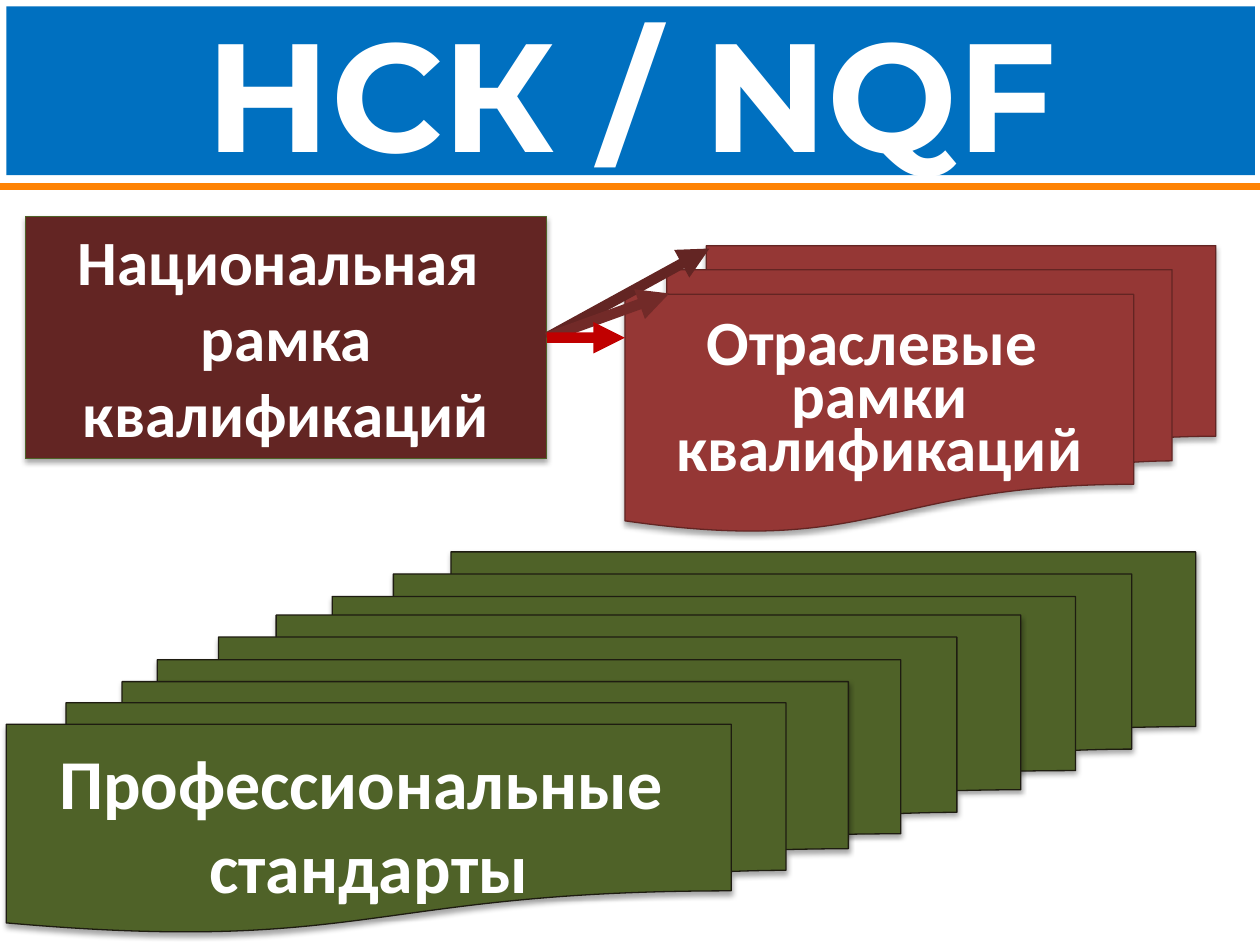
import pptx
import pptx.util
import pptx.dml.color
import pptx.enum.shapes
import pptx.enum.text
import pptx.oxml
import pptx.oxml.ns

RGBColor = pptx.dml.color.RGBColor
Inches = pptx.util.Inches
Pt = pptx.util.Pt
SHAPE = pptx.enum.shapes.MSO_SHAPE
ANCHOR = pptx.enum.text.MSO_ANCHOR

WHITE = RGBColor(0xFF, 0xFF, 0xFF)
BLUE = RGBColor(0x00, 0x70, 0xC0)
ORANGE = RGBColor(0xFE, 0x83, 0x04)
MAROON = RGBColor(0x63, 0x25, 0x23)
DARK_RED = RGBColor(0x72, 0x2A, 0x28)
RED = RGBColor(0xC0, 0x00, 0x00)
BRICK = RGBColor(0x95, 0x37, 0x35)
GREEN = RGBColor(0x4F, 0x62, 0x28)
DARK_OLIVE = RGBColor(0x1E, 0x1C, 0x11)

EMPTY_EFFECTS = f'<a:effectLst {pptx.oxml.ns.nsdecls("a")}/>'
SOFT_SHADOW = (
    f'<a:effectLst {pptx.oxml.ns.nsdecls("a")}>'
    '<a:outerShdw blurRad="39400" dist="22900" dir="5400000" rotWithShape="0">'
    '<a:srgbClr val="000000"><a:alpha val="35000"/></a:srgbClr>'
    '</a:outerShdw></a:effectLst>')


def add_block(page, kind, box, fill, outline=None):
    """Add a filled shape; outlined shapes also cast a soft shadow."""
    shape = page.shapes.add_shape(kind, *(Inches(length) for length in box))
    shape.fill.solid()
    shape.fill.fore_color.rgb = fill
    shape.shadow.inherit = False
    if outline is None:
        shape.line.fill.background()
    else:
        shape.line.color.rgb = outline
        shape.line.width = Pt(0.75)
        effects = shape.element.spPr.find(pptx.oxml.ns.qn("a:effectLst"))
        effects.getparent().replace(effects, pptx.oxml.parse_xml(SOFT_SHADOW))
    return shape


def write_lines(shape, lines, size, font="Calibri", anchor=ANCHOR.MIDDLE, spacing=None):
    """Write centred bold white paragraphs into a shape."""
    frame = shape.text_frame
    frame.word_wrap = True
    frame.vertical_anchor = anchor
    for index, line in enumerate(lines):
        para = frame.paragraphs[0] if index == 0 else frame.add_paragraph()
        para.alignment = pptx.enum.text.PP_ALIGN.CENTER
        para.line_spacing = spacing
        span = para.add_run()
        span.text = line
        span.font.name = font
        span.font.size = Pt(size)
        span.font.bold = True
        span.font.color.rgb = WHITE


def add_line(page, start, end, color, width, arrow=False):
    line = page.shapes.add_connector(
        pptx.enum.shapes.MSO_CONNECTOR.STRAIGHT,
        *(Inches(length) for length in (*start, *end)))
    line.line.color.rgb = color
    line.line.width = Pt(width)
    if arrow:
        head = f'<a:tailEnd {pptx.oxml.ns.nsdecls("a")} type="triangle"/>'
        line.line._get_or_add_ln().append(pptx.oxml.parse_xml(head))
    line.element.spPr.append(pptx.oxml.parse_xml(EMPTY_EFFECTS))


def add_standards(page, box):
    """Three stacked sets of sheets; the front one carries the label."""
    left, top, width, height = box
    for across, down in ((0.274, 0), (0.127, 0.166)):
        sheets = (left + across * width, top + down * height, 0.726 * width, 0.689 * height)
        add_block(page, SHAPE.FLOWCHART_MULTIDOCUMENT, sheets, GREEN, DARK_OLIVE)
    front = (left, top + 0.341 * height, 0.708 * width, 0.659 * height)
    label = add_block(page, SHAPE.FLOWCHART_MULTIDOCUMENT, front, GREEN, DARK_OLIVE)
    write_lines(label, ["Профессиональные ", "стандарты"], 40)


def add_national_framework(page, box):
    block = add_block(page, SHAPE.RECTANGLE, box, MAROON, MAROON)
    block.line.color.rgb = GREEN
    write_lines(block, ["Национальная ", "рамка квалификаций"], 36, anchor=ANCHOR.TOP)


def add_sector_frameworks(page, box):
    block = add_block(page, SHAPE.FLOWCHART_MULTIDOCUMENT, box, BRICK, MAROON)
    write_lines(block, ["Отраслевые ", "рамки квалификаций"], 36,
                anchor=ANCHOR.TOP, spacing=0.7)
    block.text_frame.margin_top = Inches(0.23)


def add_arrows(page, source, target):
    """Arrows from the national block to each sheet of the sector stack."""
    left, top, width, height = source
    start = (left + width, top + height / 2)
    left, top, width, height = target
    ends = ((0.143, 0.01, MAROON), (0.075, 0.167, DARK_RED), (0, 0.322, RED))
    for across, down, color in ends:
        end = (left + across * width, top + down * height)
        add_line(page, start, end, color, 6, arrow=True)


def add_title_band(page, box):
    left, top, width, height = box
    band = add_block(page, SHAPE.RECTANGLE, box, BLUE)
    write_lines(band, ["НСК / NQF"], 88, font="Montserrat")
    rule = top + height + 0.09
    add_line(page, (0, rule), (10, rule), ORANGE, 4.5)


def main():
    deck = pptx.Presentation()
    deck.slide_width, deck.slide_height = Inches(10), Inches(7.5)
    page = deck.slides.add_slide(deck.slide_layouts[6])
    national = (0.2, 1.72, 4.14, 1.92)
    sector = (4.96, 1.95, 4.69, 2.27)
    add_standards(page, (0.05, 4.38, 9.44, 3.02))
    add_national_framework(page, national)
    add_sector_frameworks(page, sector)
    add_arrows(page, national, sector)
    add_title_band(page, (0.05, 0.05, 9.91, 1.34))
    deck.save("out.pptx")


if __name__ == "__main__":
    main()
